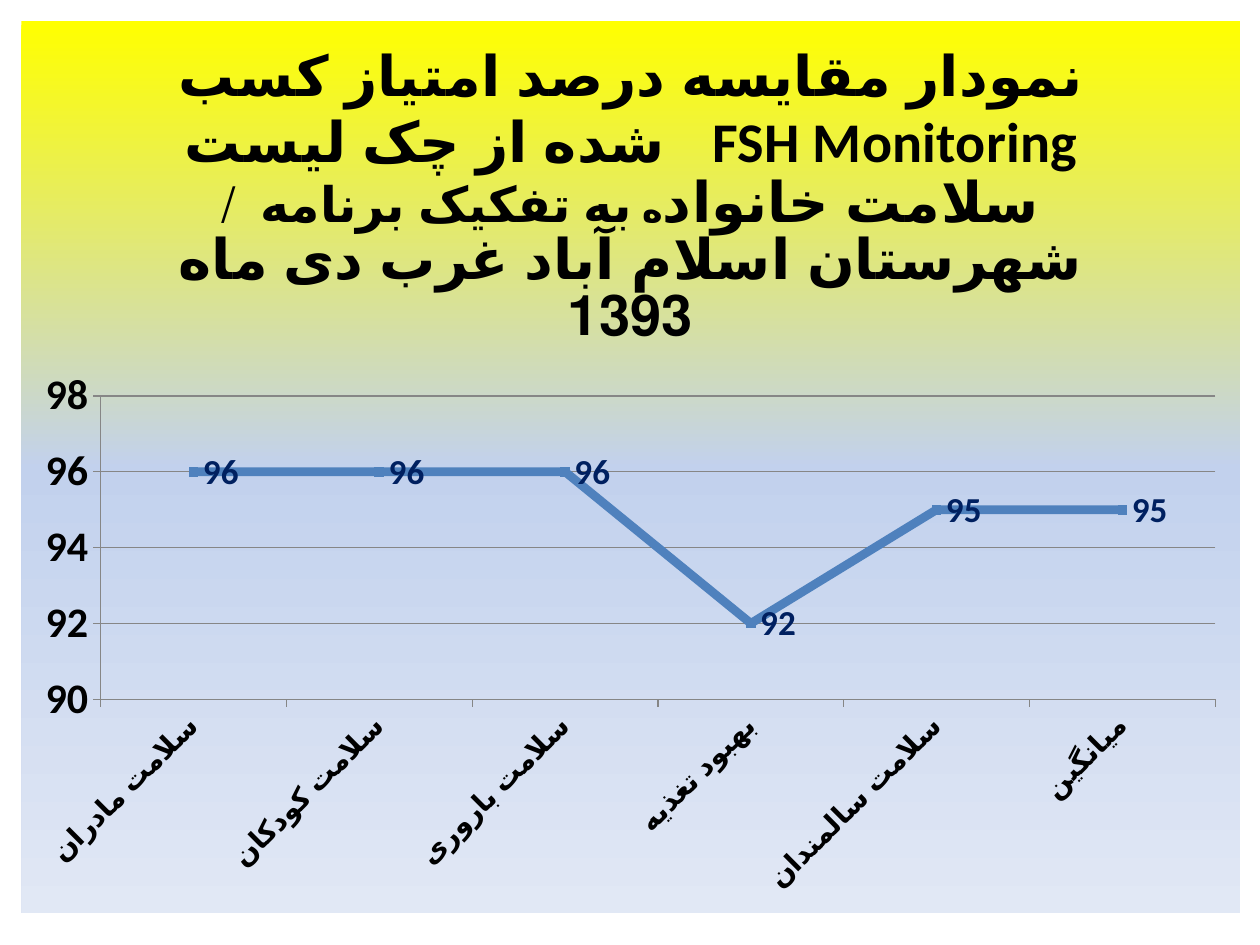
from dataclasses import dataclass

from lxml import etree
from pptx import Presentation
from pptx import util as u
from pptx.chart.data import CategoryChartData
from pptx.dml.color import RGBColor
from pptx.enum import chart as ch
from pptx.oxml import parse_xml
from pptx.oxml.ns import nsdecls, qn

PX = 9144  # EMU in one px, at 100 px to the inch


@dataclass(frozen=True)
class Theme:
    font: str = "Calibri"
    ink: str = "000000"
    label: str = "002060"
    line: str = "4F81BD"
    grid: str = "868686"
    gradient: tuple = ((0, "FFFF00"), (50, "C2D1ED"), (100, "E1E8F5"))
    title_size: int = 32
    value_size: int = 24
    label_size: int = 20
    category_size: int = 16


@dataclass(frozen=True)
class TitlePart:
    text: str
    size: int
    bold: bool = True
    font: str = Theme.font


@dataclass(frozen=True)
class Score:
    program: str
    percent: int


THEME = Theme()
TITLE = (
    TitlePart("نمودار مقایسه درصد امتیاز کسب شده از چک لیست   FSH Monitoring سلامت خانواد", THEME.title_size),
    TitlePart("ه ", 20),
    TitlePart("به تفکیک برنامه ", 28),
    TitlePart(" / ", 28, bold=False),
    TitlePart("شهرستان اسلام آباد غرب دی ماه ", THEME.title_size),
    TitlePart("1393", THEME.title_size, font="Arial"),
)
SCORES = (
    Score("سلامت مادران", 96),
    Score("سلامت کودکان", 96),
    Score("سلامت باروری", 96),
    Score("بهبود تغذیه", 92),
    Score("سلامت سالمندان", 95),
    Score("میانگین", 95),
)


def px(n: int) -> u.Emu:
    return u.Emu(n * PX)


def format_font(font, *, size: int, color: str = THEME.ink, bold: bool = True,
                name: str = THEME.font) -> None:
    font.size, font.bold, font.name = u.Pt(size), bold, name
    font.color.rgb = RGBColor.from_string(color)


def add_run(p, text: str, **fmt) -> None:
    r = p.add_run()
    r.text = text
    format_font(r.font, **fmt)


def format_line(line, color: str, width: float) -> None:
    line.color.rgb = RGBColor.from_string(color)
    line.width = u.Pt(width)


def fill_gradient(chart) -> None:
    """Give the chart area its vertical gradient and no outline."""
    stops = "".join(f'<a:gs pos="{pos * 1000}"><a:srgbClr val="{color}"/></a:gs>'
                    for pos, color in THEME.gradient)
    area = parse_xml(
        f'<c:spPr {nsdecls("c", "a")}><a:gradFill><a:gsLst>{stops}</a:gsLst>'
        '<a:lin ang="5400000" scaled="0"/></a:gradFill><a:ln><a:noFill/></a:ln></c:spPr>')
    chart.element.find(qn("c:chart")).addnext(area)


def place_plot(chart, **fractions: float) -> None:
    """Fix the inner plot area as fractions of the chart."""
    plot_area = chart.element.find(qn("c:chart")).find(qn("c:plotArea"))
    for old in plot_area.findall(qn("c:layout")):
        plot_area.remove(old)
    layout = etree.Element(qn("c:layout"))
    manual = etree.SubElement(layout, qn("c:manualLayout"))
    settings = {"layoutTarget": "inner", "xMode": "edge", "yMode": "edge", **fractions}
    for tag, value in settings.items():
        etree.SubElement(manual, qn(f"c:{tag}")).set("val", str(value))
    plot_area.insert(0, layout)


def format_axis(axis, size: int) -> None:
    format_font(axis.tick_labels.font, size=size)
    format_line(axis.format.line, THEME.grid, 0.75)
    axis.major_tick_mark = ch.XL_TICK_MARK.OUTSIDE
    axis.minor_tick_mark = ch.XL_TICK_MARK.NONE


def add_score_chart(s) -> None:
    data = CategoryChartData()
    data.categories = [score.program for score in SCORES]
    data.add_series("Series 1", [score.percent for score in SCORES])
    chart = s.shapes.add_chart(ch.XL_CHART_TYPE.LINE_MARKERS,
                               px(17), px(17), px(967), px(708), data).chart
    chart.has_legend = False
    format_font(chart.font, size=10, bold=False)
    fill_gradient(chart)
    place_plot(chart, x=0.065, y=0.42, w=0.915, h=0.34)

    # Title
    p = chart.chart_title.text_frame.paragraphs[0]
    for part in TITLE:
        add_run(p, part.text, size=part.size, bold=part.bold, name=part.font)
    chart.chart_title.include_in_layout = False

    # Axes
    programs, percents = chart.category_axis, chart.value_axis
    format_axis(programs, THEME.category_size)
    programs.tick_labels.font  # text properties exist from here on
    body = programs._element.find(qn("c:txPr")).find(qn("a:bodyPr"))
    body.set("rot", "-2700000")
    format_axis(percents, THEME.value_size)
    percents.minimum_scale, percents.maximum_scale, percents.major_unit = 90, 98, 2
    percents.has_major_gridlines = True
    format_line(percents.major_gridlines.format.line, THEME.grid, 0.75)

    # Line, markers and value labels
    plot = chart.plots[0]
    plot.vary_by_categories = False
    series = plot.series[0]
    series.smooth = False
    format_line(series.format.line, THEME.line, 5)
    marker = series.marker
    marker.style, marker.size = ch.XL_MARKER_STYLE.SQUARE, 5
    marker.format.fill.solid()
    marker.format.fill.fore_color.rgb = RGBColor.from_string(THEME.line)
    format_line(marker.format.line, THEME.line, 0.75)
    labels = series.data_labels
    labels.show_value = True
    labels.position = ch.XL_LABEL_POSITION.RIGHT
    format_font(labels.font, size=THEME.label_size, color=THEME.label)


def main() -> None:
    prs = Presentation()
    prs.slide_width, prs.slide_height = px(1000), px(750)
    s = prs.slides.add_slide(prs.slide_layouts[6])
    add_score_chart(s)
    prs.save("out.pptx")


if __name__ == "__main__":
    main()
